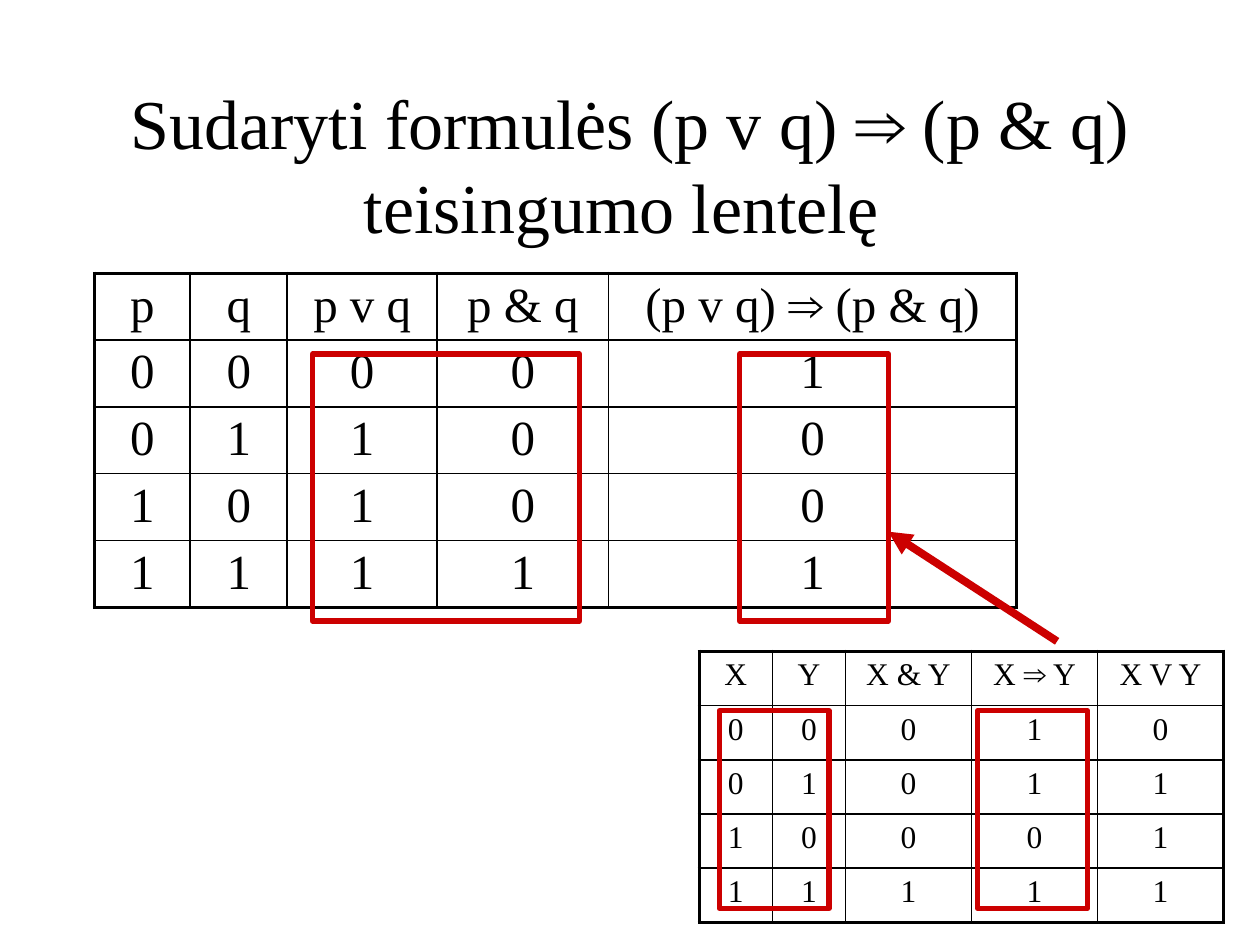
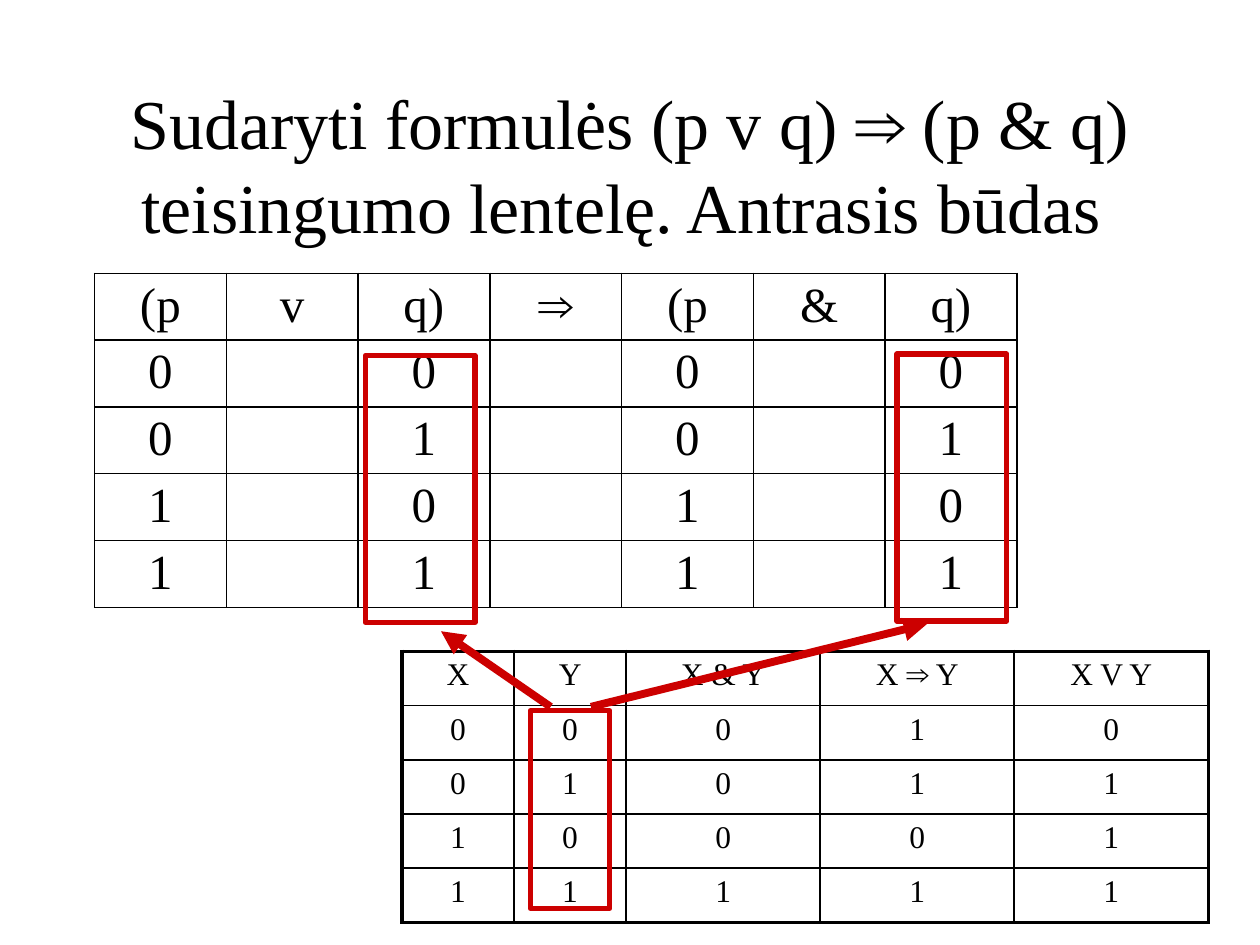
from dataclasses import dataclass

from lxml import etree
from pptx import Presentation
from pptx import util as u
from pptx.dml.color import RGBColor
from pptx.enum import shapes, text
from pptx.oxml import ns

FONT = "Times New Roman"
INK = "000000"
MARK = "CC0000"
TITLE_SIZE = 40
THIN, THICK = 1, 2.25
TITLE_ONLY = 5
FORMULA = "(p v q) ⇒ (p & q)"


@dataclass(frozen=True)
class TruthTable:
    left: float
    top: float
    columns: tuple[float, ...]
    row_height: float
    size: int
    margin: float
    frame: float
    header: tuple[str, ...]
    values: tuple[str, ...]


@dataclass(frozen=True)
class Highlight:
    left: float
    top: float
    width: float
    height: float


@dataclass(frozen=True)
class Arrow:
    start: tuple[float, float]
    end: tuple[float, float]


@dataclass(frozen=True)
class Page:
    title: str
    tables: tuple[TruthTable, ...]
    highlights: tuple[Highlight, ...]
    arrows: tuple[Arrow, ...]


def colour(value: str) -> RGBColor:
    return RGBColor.from_string(value)


def inches(*lengths: float) -> list[u.Length]:
    return [u.Inches(length) for length in lengths]


def write(paragraph, words: str, size: int) -> None:
    paragraph.alignment = text.PP_ALIGN.CENTER
    run = paragraph.add_run()
    run.text = words
    run.font.name = FONT
    run.font.size = u.Pt(size)
    run.font.bold = False
    run.font.color.rgb = colour(INK)


def draw_title(slide, words: str) -> None:
    title = slide.shapes.title
    title.left, title.top, title.width, title.height = inches(0.75, 0.67, 8.5, 1.25)
    frame = title.text_frame
    frame.word_wrap = True
    frame.auto_size = text.MSO_AUTO_SIZE.NONE
    frame.vertical_anchor = text.MSO_ANCHOR.MIDDLE
    write(frame.paragraphs[0], words, TITLE_SIZE)


def set_borders(cell, widths: dict[str, float]) -> None:
    properties = cell._tc.get_or_add_tcPr()
    for position, (side, width) in enumerate(widths.items()):
        border = etree.Element(ns.qn(f"a:ln{side}"), w=str(int(u.Pt(width))))
        fill = etree.SubElement(border, ns.qn("a:solidFill"))
        etree.SubElement(fill, ns.qn("a:srgbClr"), val=INK)
        properties.insert(position, border)


def draw_table(slide, spec: TruthTable) -> None:
    grid = [spec.header, *spec.values]
    last_row, last_column = len(grid) - 1, len(spec.columns) - 1
    area = inches(spec.left, spec.top, sum(spec.columns), spec.row_height * len(grid))
    table = slide.shapes.add_table(len(grid), len(spec.columns), *area).table
    table.first_row = table.horz_banding = False
    for column, width in zip(table.columns, spec.columns):
        column.width = u.Inches(width)
    for r, entries in enumerate(grid):
        table.rows[r].height = u.Inches(spec.row_height)
        for c, entry in enumerate(entries):
            cell = table.cell(r, c)
            cell.margin_top = cell.margin_bottom = u.Inches(spec.margin)
            cell.fill.background()
            set_borders(cell, {
                "L": spec.frame if c == 0 else THIN,
                "R": spec.frame if c == last_column else THIN,
                "T": spec.frame if r == 0 else THIN,
                "B": spec.frame if r == last_row else THIN,
            })
            if entry.strip():
                write(cell.text_frame.paragraphs[0], entry, spec.size)


def draw_highlight(slide, spec: Highlight) -> None:
    area = inches(spec.left, spec.top, spec.width, spec.height)
    box = slide.shapes.add_shape(shapes.MSO_SHAPE.RECTANGLE, *area)
    box.shadow.inherit = False
    box.fill.background()
    box.line.color.rgb = colour(MARK)
    box.line.width = u.Pt(3)


def draw_arrow(slide, spec: Arrow) -> None:
    arrow = slide.shapes.add_connector(
        shapes.MSO_CONNECTOR.STRAIGHT, *inches(*spec.start, *spec.end))
    arrow.line.color.rgb = colour(MARK)
    arrow.line.width = u.Pt(4.5)
    properties = arrow._element.spPr
    etree.SubElement(properties.find(ns.qn("a:ln")), ns.qn("a:tailEnd"), type="triangle")
    etree.SubElement(properties, ns.qn("a:effectLst"))


def main_table(columns: tuple[float, ...], frame: float,
               header: tuple[str, ...], values: tuple[str, ...]) -> TruthTable:
    return TruthTable(0.75, 2.17, columns, 0.53, 28, 0.04, frame, header, values)


def operations_table(left: float, operand: float, result: float) -> TruthTable:
    return TruthTable(
        left, 5.17, (operand,) * 2 + (result,) * 3, 0.43, 18, 0.05, THICK,
        ("X", "Y", "X & Y", "X ⇒ Y", "X V Y"),
        ("00010", "01011", "10001", "11111"))


def main_highlight(left: float, width: float, top: float = 2.81) -> Highlight:
    return Highlight(left, top, width, 2.12)


def operations_highlight(left: float, width: float) -> Highlight:
    return Highlight(left, 5.64, width, 1.57)


PAGES = (
    Page(
        f"Sudaryti formulės {FORMULA} teisingumo lentelę ",
        (
            operations_table(5.55, 0.58, 1),
            main_table((0.76, 0.77, 1.19, 1.36, 3.24), THICK,
                       ("p", "q", "p v q", "p & q", FORMULA),
                       ("00001", "01100", "10100", "11111")),
        ),
        (
            operations_highlight(7.76, 0.87),
            main_highlight(5.87, 1.18),
            operations_highlight(5.71, 0.87),
            main_highlight(2.48, 2.12),
        ),
        (Arrow((8.39, 5.09), (7.05, 4.22)),),
    ),
    Page(
        f"Sudaryti formulės {FORMULA} teisingumo lentelę. Antrasis būdas ",
        (
            main_table((7.32 / 7,) * 7, THIN,
                       ("(p", "v", "q)", "⇒", "(p", "&", "q)"),
                       ("0 0 0 0", "0 1 0 1", "1 0 1 0", "1 1 1 1")),
            operations_table(3.19, 0.89, 1.54),
        ),
        (
            operations_highlight(4.21, 0.63),
            main_highlight(2.9, 0.87, 2.82),
            main_highlight(7.12, 0.87),
        ),
        (
            Arrow((4.37, 5.61), (3.5, 5.01)),
            Arrow((4.69, 5.61), (7.36, 4.95)),
        ),
    ),
)


def main() -> None:
    deck = Presentation()
    deck.slide_width, deck.slide_height = inches(10, 7.5)
    for page in PAGES:
        slide = deck.slides.add_slide(deck.slide_layouts[TITLE_ONLY])
        draw_title(slide, page.title)
        for table in page.tables:
            draw_table(slide, table)
        for highlight in page.highlights:
            draw_highlight(slide, highlight)
        for arrow in page.arrows:
            draw_arrow(slide, arrow)
    deck.save("out.pptx")


if __name__ == "__main__":
    main()
